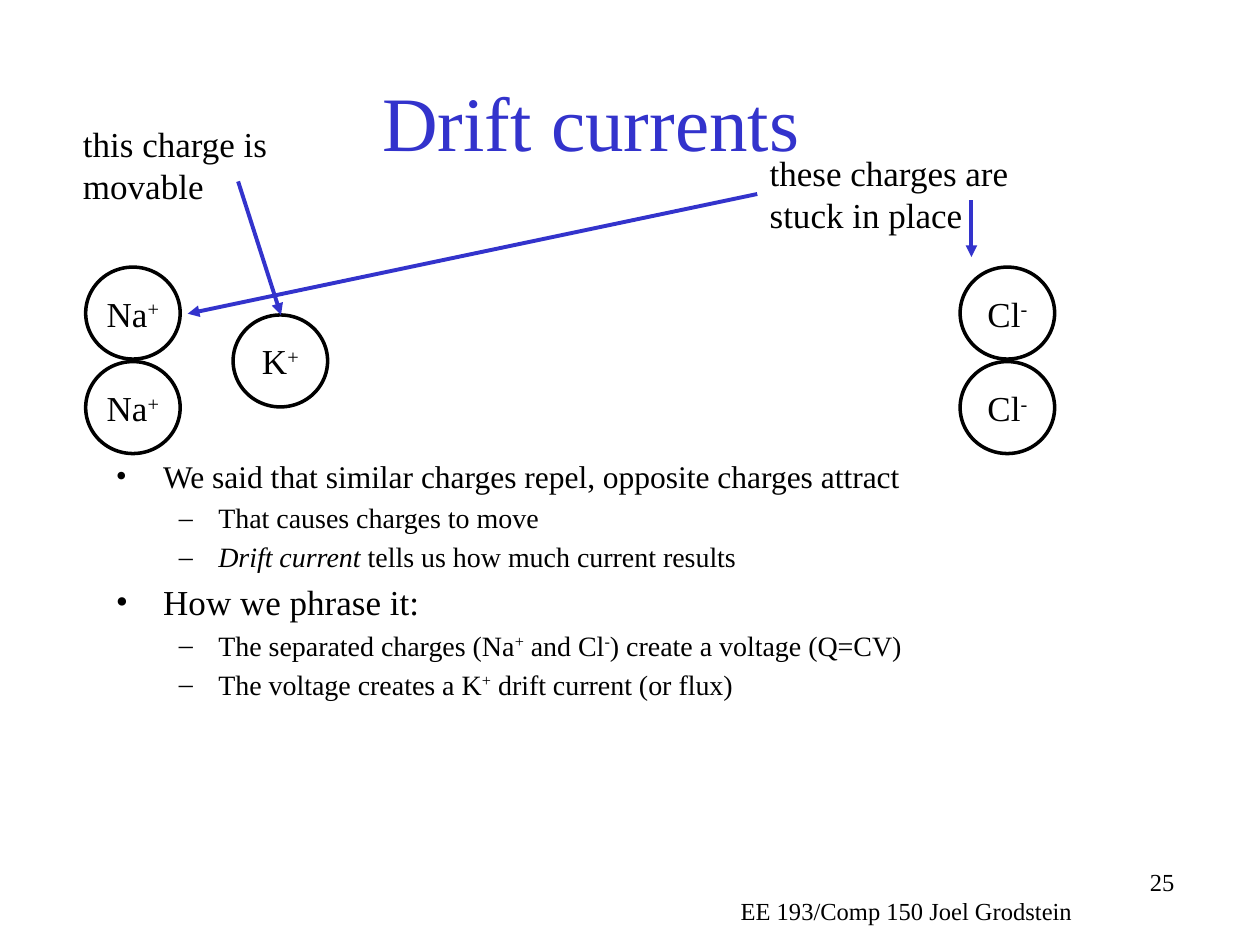
"""Build the drift currents slide with its ions, arrows and bullet list."""
from dataclasses import dataclass

from lxml.etree import SubElement
from pptx import Presentation
from pptx.dml.color import RGBColor
from pptx.enum.shapes import MSO_CONNECTOR as Connector, MSO_SHAPE as Shape
from pptx.enum.text import MSO_ANCHOR as Anchor, MSO_AUTO_SIZE as AutoSize, PP_ALIGN as Align
from pptx.oxml.ns import qn
from pptx.util import Inches, Pt

BLACK = RGBColor(0x00, 0x00, 0x00)
BLUE = RGBColor(0x33, 0x33, 0xCC)
FONT = "Times New Roman"
ION_WIDTH, ION_HEIGHT = 0.75, 0.73
LEFT_COLUMN, RIGHT_COLUMN = 0.68, 7.62
UPPER_ROW, LOWER_ROW = 2.12, 2.87


@dataclass(frozen=True)
class Ion:
    symbol: str
    charge: str
    left: float
    top: float


@dataclass(frozen=True)
class Label:
    text: str
    left: float
    top: float
    width: float
    height: float
    size: int = 20
    align: Align = Align.LEFT


@dataclass(frozen=True)
class Arrow:
    start: tuple[float, float]
    end: tuple[float, float]


@dataclass(frozen=True)
class Piece:
    text: str
    italic: bool = False
    raised: bool = False


@dataclass(frozen=True)
class Bullet:
    level: int
    size: int
    pieces: tuple[Piece, ...]


PLUS, MINUS = Piece("+", raised=True), Piece("-", raised=True)

IONS = [
    Ion("Na", "+", LEFT_COLUMN, UPPER_ROW),
    Ion("Na", "+", LEFT_COLUMN, LOWER_ROW),
    Ion("K", "+", 1.85, 2.5),
    Ion("Cl", "-", RIGHT_COLUMN, UPPER_ROW),
    Ion("Cl", "-", RIGHT_COLUMN, LOWER_ROW),
]
LABELS = [
    Label("25", 6.25, 6.83, 3.17, 0.5, 14, Align.RIGHT),
    Label("EE 193/Comp 150 Joel Grodstein", 5.61, 7.06, 3.17, 0.34, 14, Align.CENTER),
    Label("these charges are stuck in place", 6.01, 1.15, 2.61, 0.77),
    Label("this charge is movable", 0.56, 0.92, 1.89, 0.77),
]
ARROWS = [
    Arrow((1.89, 1.44), (2.23, 2.5)),
    Arrow((7.71, 1.59), (7.71, 2.04)),
    Arrow((6.01, 1.54), (1.49, 2.49)),
]
BULLETS = [
    Bullet(0, 18, (Piece("We said that similar charges repel, opposite charges attract"),)),
    Bullet(1, 16, (Piece("That causes charges to move"),)),
    Bullet(1, 16, (Piece("Drift current", italic=True),
                   Piece(" tells us how much current results"))),
    Bullet(0, 20, (Piece("How we phrase it:"),)),
    Bullet(1, 16, (Piece("The separated charges (Na"), PLUS, Piece(" and Cl"), MINUS,
                   Piece(") create a voltage (Q=CV)"))),
    Bullet(1, 16, (Piece("The voltage creates a K"), PLUS,
                   Piece(" drift current (or flux)"))),
]


def place(shape, left: float, top: float, width: float, height: float) -> None:
    shape.left, shape.top = Inches(left), Inches(top)
    shape.width, shape.height = Inches(width), Inches(height)


def style(font, size: int, color: RGBColor = BLACK) -> None:
    font.name, font.size = FONT, Pt(size)
    font.color.rgb = color


def add_pieces(para, pieces: tuple[Piece, ...], size: int) -> None:
    for piece in pieces:
        span = para.add_run()
        span.text = piece.text
        style(span.font, size)
        if piece.italic:
            span.font.italic = True
        if piece.raised:
            span._r.get_or_add_rPr().set("baseline", "30000")


def fill_title(title) -> None:
    place(title, 0.44, 0.33, 8.5, 1.25)
    title.text_frame.text = "Drift currents"
    title.text_frame.vertical_anchor = Anchor.MIDDLE
    para = title.text_frame.paragraphs[0]
    para.alignment = Align.CENTER
    style(para.runs[0].font, 44, BLUE)


def fill_body(body) -> None:
    place(body, 0.82, 3.58, 7.9, 2.42)
    frame = body.text_frame
    frame.auto_size = AutoSize.NONE
    for index, bullet in enumerate(BULLETS):
        para = frame.add_paragraph() if index else frame.paragraphs[0]
        para.level = bullet.level
        SubElement(para._p.get_or_add_pPr(), qn("a:buFont")).set("typeface", FONT)
        add_pieces(para, bullet.pieces, bullet.size)


def draw_ion(page, ion: Ion) -> None:
    circle = page.shapes.add_shape(Shape.OVAL, Inches(ion.left), Inches(ion.top),
                                   Inches(ION_WIDTH), Inches(ION_HEIGHT))
    circle.shadow.inherit = False
    circle.fill.background()
    circle.line.color.rgb = BLACK
    circle.line.width = Pt(2)
    frame = circle.text_frame
    frame.margin_left = frame.margin_right = frame.margin_top = frame.margin_bottom = 0
    frame.vertical_anchor = Anchor.MIDDLE
    para = frame.paragraphs[0]
    para.alignment = Align.CENTER
    add_pieces(para, (Piece(ion.symbol), Piece(ion.charge, raised=True)), 20)


def draw_label(page, label: Label) -> None:
    box = page.shapes.add_textbox(Inches(label.left), Inches(label.top),
                                  Inches(label.width), Inches(label.height))
    box.text_frame.word_wrap = True
    box.text_frame.text = label.text
    para = box.text_frame.paragraphs[0]
    para.alignment = label.align
    style(para.runs[0].font, label.size)


def draw_arrow(page, arrow: Arrow) -> None:
    ends = [Inches(value) for value in arrow.start + arrow.end]
    line = page.shapes.add_connector(Connector.STRAIGHT, *ends)
    line.line.color.rgb = BLUE
    line.line.width = Pt(2.25)
    SubElement(line.line._get_or_add_ln(), qn("a:tailEnd")).set("type", "triangle")
    SubElement(line._element.spPr, qn("a:effectLst"))


def main() -> None:
    deck = Presentation()
    deck.slide_width, deck.slide_height = Inches(10), Inches(7.5)
    page = deck.slides.add_slide(deck.slide_layouts[1])
    fill_title(page.shapes.title)
    fill_body(page.placeholders[1])
    for ion in IONS:
        draw_ion(page, ion)
    for label in LABELS:
        draw_label(page, label)
    for arrow in ARROWS:
        draw_arrow(page, arrow)
    deck.save("out.pptx")


if __name__ == "__main__":
    main()
